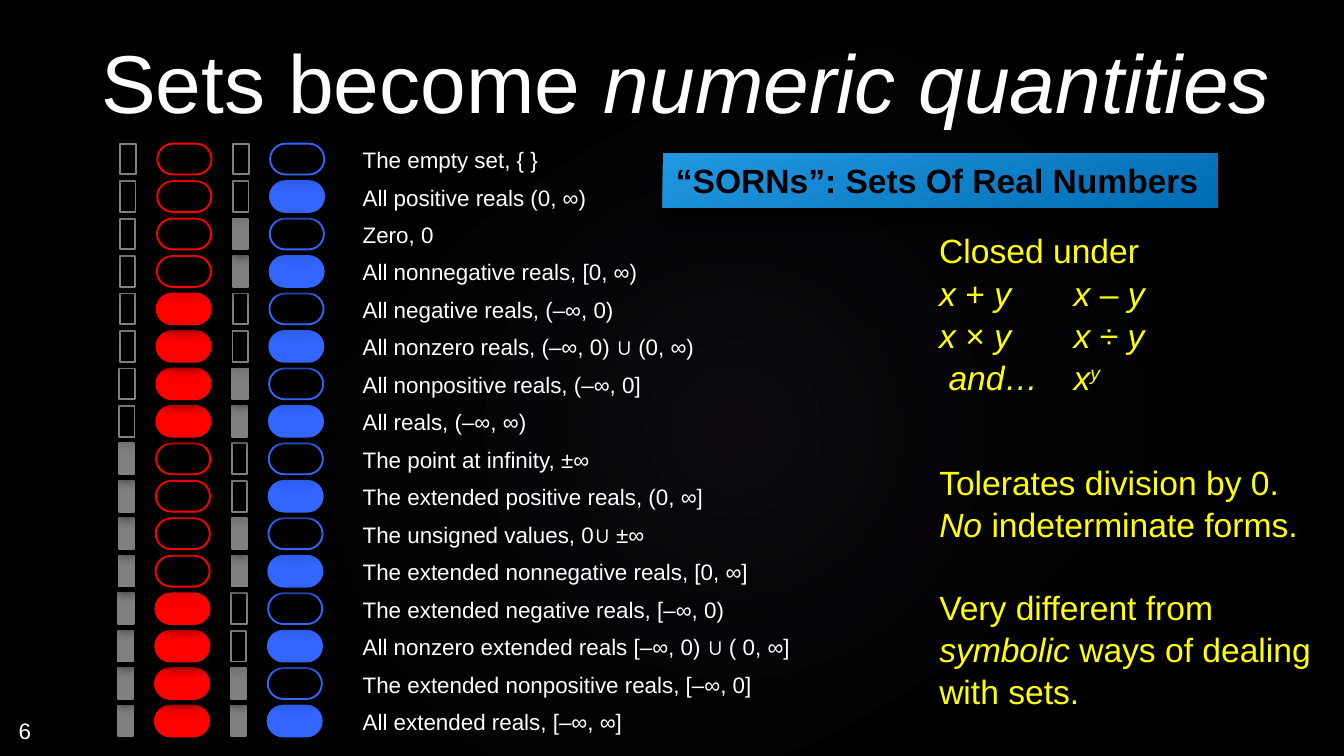
from lxml import etree
from pptx import Presentation
from pptx.dml.color import RGBColor
from pptx.enum.shapes import MSO_SHAPE
from pptx.enum.text import MSO_ANCHOR, MSO_AUTO_SIZE, PP_ALIGN
from pptx.oxml.ns import qn
from pptx.util import Pt

RECT, PILL, OVAL = MSO_SHAPE.RECTANGLE, MSO_SHAPE.ROUNDED_RECTANGLE, MSO_SHAPE.OVAL
TOP, MIDDLE, BOTTOM = MSO_ANCHOR.TOP, MSO_ANCHOR.MIDDLE, MSO_ANCHOR.BOTTOM
LEFT, CENTER = PP_ALIGN.LEFT, PP_ALIGN.CENTER
FONT, WHITE, YELLOW, BLACK = "Arial", "FFFFFF", "FFFF00", "000000"

# Content: spans are (text, style), where i = italic and s = superscript
TITLE = [[("Sets become ", ""), ("numeric quantities", "i")]]
BANNER = [[("“SORNs”: Sets Of Real Numbers", "")]]
PAGE_NUMBER = [[("6", "")]]
CLOSED_UNDER = [
    [("Closed under", "")],
    [("x ", "i"), ("+ ", ""), ("y\tx ", "i"), ("– ", ""), ("y", "i")],
    [("x ", "i"), ("× ", ""), ("y\tx ", "i"), ("÷ ", ""), ("y", "i")],
    [(" ", ""), ("and…\tx", "i"), ("y", "is")],
]
BENEFITS = [
    [("Tolerates division by 0.", "")],
    [("No", "i"), (" indeterminate forms.", "")],
    [("Very different from ", ""), ("symbolic", "i"), (" ways of dealing", "")],
    [("with sets.", "")],
]
# Row number in binary tells which of the four marks are filled
SETS = [
    "The empty set, { }",
    "All positive reals (0, ∞)",
    "Zero, 0",
    "All nonnegative reals, [0, ∞)",
    "All negative reals, (–∞, 0)",
    "All nonzero reals, (–∞, 0) ∪ (0, ∞)",
    "All nonpositive reals, (–∞, 0]",
    "All reals, (–∞, ∞)",
    "The point at infinity, ±∞",
    "The extended positive reals, (0, ∞]",
    "The unsigned values, 0∪ ±∞",
    "The extended nonnegative reals, [0, ∞]",
    "The extended negative reals, [–∞, 0)",
    "All nonzero extended reals [–∞, 0) ∪ ( 0, ∞]",
    "The extended nonpositive reals, [–∞, 0]",
    "All extended reals, [–∞, ∞]",
]
# Marks: bit, preset, left, width, colour
MARKS = [
    (1, PILL, 144.7, 29, "3366FF"),
    (4, PILL, 84.3, 29, "FF0000"),
    (8, RECT, 64.5, 8.2, "808080"),
    (2, RECT, 125, 8.2, "808080"),
]
FIRST_MARK, FIRST_LABEL = 77, 74.1
ROW_STEP, ROW_DRIFT, MARK_HEIGHT = 20.07, -0.09, 16.5


def colour(code):
    return RGBColor.from_string(code)


def write(box, paragraphs, size, code, bold=False, align=LEFT, anchor=TOP, spacing=1.05):
    frame = box.text_frame
    frame.word_wrap = True
    frame.auto_size = MSO_AUTO_SIZE.NONE
    frame.vertical_anchor = anchor
    for index, spans in enumerate(paragraphs):
        para = frame.add_paragraph() if index else frame.paragraphs[0]
        para.alignment, para.line_spacing = align, spacing
        font = para.font
        font.name, font.size, font.bold = FONT, Pt(size), bold
        font.color.rgb = colour(code)
        for text, style in spans:
            span = para.add_run()
            span.text = text
            if "i" in style:
                span.font.italic = True
            if "s" in style:
                span.font._element.set("baseline", "30000")
    return frame


def add_text(left, top, width, height, *content, **options):
    box = page.shapes.add_textbox(Pt(left), Pt(top), Pt(width), Pt(height))
    return write(box, *content, **options)


def add_shape(preset, left, top, width, height):
    shape = page.shapes.add_shape(preset, Pt(left), Pt(top), Pt(width), Pt(height))
    shape.shadow.inherit = False
    shape.fill.background()
    shape.line.fill.background()
    return shape


def add_shadow(shape, alpha, blur, distance):
    effects = shape._element.spPr.find(qn("a:effectLst"))
    shadow = etree.SubElement(effects, qn("a:outerShdw"), blurRad=str(Pt(blur)),
                              dist=str(Pt(distance)), dir="5400000", rotWithShape="0")
    tint = etree.SubElement(shadow, qn("a:srgbClr"), val=BLACK)
    etree.SubElement(tint, qn("a:alpha"), val=str(alpha * 1000))


def set_gradient(shape, stops, angle=None):
    """Stops are (percent, colour, opacity); without an angle it is radial."""
    properties = shape._element.spPr
    gradient = etree.Element(qn("a:gradFill"), rotWithShape="1")
    stop_list = etree.SubElement(gradient, qn("a:gsLst"))
    for percent, code, opacity in stops:
        stop = etree.SubElement(stop_list, qn("a:gs"), pos=str(percent * 1000))
        tint = etree.SubElement(stop, qn("a:srgbClr"), val=code)
        if opacity < 100:
            etree.SubElement(tint, qn("a:alpha"), val=str(opacity * 1000))
    if angle is None:
        radial = etree.SubElement(gradient, qn("a:path"), path="circle")
        etree.SubElement(radial, qn("a:fillToRect"), l="50000", t="50000", r="50000", b="50000")
    else:
        etree.SubElement(gradient, qn("a:lin"), ang=str(angle * 60000), scaled="0")
    properties.replace(properties.find(qn("a:noFill")), gradient)


deck = Presentation()
deck.slide_width, deck.slide_height = Pt(720), Pt(405)
page = deck.slides.add_slide(deck.slide_layouts[5])
page.background.fill.solid()
page.background.fill.fore_color.rgb = colour(BLACK)

# Soft glow, placed behind the title
glow = add_shape(OVAL, 108, 61.2, 570.2, 337)
glow.rotation = 328.7
set_gradient(glow, [(0, "BB85EC", 7), (58, "465466", 0), (100, "465466", 0)])
page.shapes._spTree.insert(2, glow._element)

# Title and page number
title = page.shapes.title
title.left, title.top, title.width, title.height = Pt(46.8), Pt(19.4), Pt(641.5), Pt(54)
frame = write(title, TITLE, 44, WHITE, align=CENTER, anchor=BOTTOM, spacing=1.0)
frame.margin_left = frame.margin_right = 0
add_text(2.9, 380.2, 29.5, 21.6, PAGE_NUMBER, 12, WHITE)

# Remarks on the right
add_text(496.1, 118.8, 129.6, 94.3, CLOSED_UNDER, 18, YELLOW)
benefits = add_text(496.1, 242.6, 215.3, 138.2, BENEFITS, 18, YELLOW)
benefits.paragraphs[2].space_before = Pt(21.7)

# Banner
banner = add_shape(RECT, 355, 82, 297.4, 29)
set_gradient(banner, [(0, "2397E2", 100), (100, "006CB2", 100)], angle=69)
add_shadow(banner, 70, 9, 9)
write(banner, BANNER, 18, BLACK, bold=True, anchor=MIDDLE, spacing=1.0)

# Rows of marks and labels, bottom row first so shadows fall on the row below
for row in reversed(range(len(SETS))):
    for bit, preset, left, width, code in MARKS:
        mark = add_shape(preset, left + row * ROW_DRIFT, FIRST_MARK + row * ROW_STEP,
                         width, MARK_HEIGHT)
        if preset == PILL:
            mark.adjustments[0] = 0.5
        if row & bit:
            mark.fill.solid()
            mark.fill.fore_color.rgb = colour(code)
        mark.line.color.rgb = colour(code)
        mark.line.width = Pt(1)
        add_shadow(mark, 60, 6, 3)
    add_text(187.2, FIRST_LABEL + row * ROW_STEP, 300, 21.6, [[(SETS[row], "")]], 12, WHITE)

deck.save("out.pptx")
